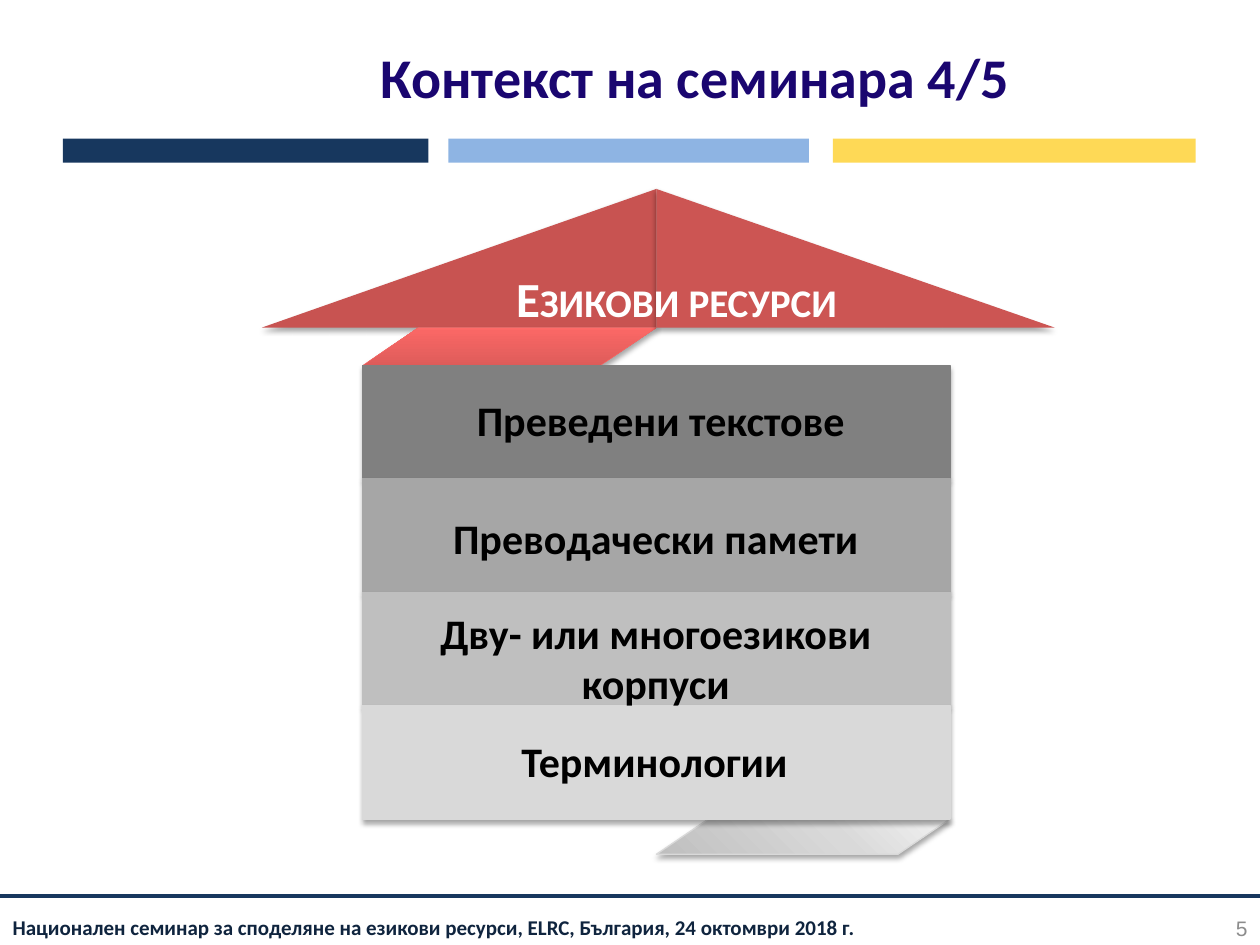
from lxml.etree import SubElement
from pptx import Presentation
from pptx.dml.color import RGBColor
from pptx.enum.shapes import MSO_CONNECTOR as Connector, MSO_SHAPE as Shape
from pptx.enum.text import MSO_ANCHOR as Anchor, PP_ALIGN as Align
from pptx.oxml.ns import qn
from pptx.util import Inches, Pt

WIDTH, HEIGHT = 10, 7.5
TITLE = "Контекст на семинара 4/5"
FOOTER = "Национален семинар за споделяне на езикови ресурси, ELRC, България, 24 октомври 2018 г."
PAGE_NUMBER = "5"
ROOF_LABEL = "Езикови ресурси"
BARS = [(0.5, 2.9, "17375E"), (3.56, 2.86, "8EB4E3"), (6.61, 2.88, "FED956")]
FLOORS = [
    ("Преведени текстове", "808080", 3.33, 3.08, 0.5),
    ("Преводачески памети", "A6A6A6", 3.29, 4.02, 0.5),
    ("Дву- или многоезикови корпуси", "BFBFBF", 3.29, 4.77, 0.91),
    ("Терминологии", "D9D9D9", 3.28, 5.79, 0.5),
]
RED_FOLD = [(1, "DE5C5A"), (91, "F96765"), (100, "FF6A68")]
GREY_FOLD = [(0, "BFBFBF"), (61, "D9D9D9"), (100, "F2F2F2")]

WALL_LEFT, WALL_TOP, WALL_WIDTH, FLOOR_HEIGHT = 2.88, 2.9, 4.66, 0.9
MIDDLE = WALL_LEFT + WALL_WIDTH / 2
ROOF_TOP, ROOF_HEIGHT = 1.5, 1.1
ROOF_BOTTOM = ROOF_TOP + ROOF_HEIGHT
WALL_BOTTOM = WALL_TOP + len(FLOORS) * FLOOR_HEIGHT

presentation = Presentation()
presentation.slide_width, presentation.slide_height = Inches(WIDTH), Inches(HEIGHT)
slide = presentation.slides.add_slide(presentation.slide_layouts[6])


def color(value):
    return RGBColor.from_string(value)


def add_shadow(shape):
    effects = shape._element.spPr.find(qn("a:effectLst"))
    shadow = SubElement(effects, qn("a:outerShdw"), blurRad=str(Pt(3.1)),
                        dist=str(Pt(1.8)), dir="5400000", rotWithShape="0")
    tint = SubElement(shadow, qn("a:srgbClr"), val="000000")
    SubElement(tint, qn("a:alpha"), val="35000")


def add_shape(kind, box, fill=None, line=None, line_width=0.75, shadow=True):
    shape = slide.shapes.add_shape(kind, *map(Inches, box))
    shape.shadow.inherit = False
    if fill:
        shape.fill.solid()
        shape.fill.fore_color.rgb = color(fill)
    if line:
        shape.line.color.rgb = color(line)
        shape.line.width = Pt(line_width)
    else:
        shape.line.fill.background()
    if shadow:
        add_shadow(shape)
    return shape


def add_fold(box, stops, angle, line, line_width):
    shape = add_shape(Shape.PARALLELOGRAM, box, None, line, line_width)
    shape.adjustments[0] = 1.476
    shape.fill.gradient()
    shape.fill.gradient_angle = angle
    stop_list = shape._element.spPr.find(qn("a:gradFill")).find(qn("a:gsLst"))
    for stop in list(stop_list):
        stop_list.remove(stop)
    for position, value in stops:
        stop = SubElement(stop_list, qn("a:gs"), pos=str(position * 1000))
        SubElement(stop, qn("a:srgbClr"), val=value)


def add_text(box, text, size, value, align=Align.CENTER, bold=True,
             font="Calibri", anchor=Anchor.TOP, insets=(0.1, 0.05)):
    shape = slide.shapes.add_textbox(*map(Inches, box))
    frame = shape.text_frame
    frame.word_wrap = True
    frame.vertical_anchor = anchor
    frame.margin_left = frame.margin_right = Inches(insets[0])
    frame.margin_top = frame.margin_bottom = Inches(insets[1])
    frame.text = text
    paragraph = frame.paragraphs[0]
    paragraph.alignment = align
    run = paragraph.runs[0]
    run.font.name, run.font.size, run.font.bold = font, Pt(size), bold
    run.font.color.rgb = color(value)
    return shape


for left, width, fill in BARS:
    add_shape(Shape.RECTANGLE, (left, 1.1, width, 0.19), fill, shadow=False)

rule = slide.shapes.add_connector(Connector.STRAIGHT, Inches(WIDTH), Inches(7.11), 0, Inches(7.11))
rule.line.color.rgb = color("17375E")
rule.line.width = Pt(2.25)
SubElement(rule._element.spPr, qn("a:effectLst"))

footer = add_text((0.02, 7.24, 7.17, 0.26), FOOTER, 12, "0F243E", Align.LEFT, insets=(0.08, 0.04))
footer.text_frame.paragraphs[0].line_spacing = 0.9
add_text((2.36, 0.14, 6.31, 0.92), TITLE, 32, "1A0670", anchor=Anchor.MIDDLE, insets=(0, 0))
add_text((7.67, 7.17, 2.33, 0.4), PAGE_NUMBER, 12, "8C8C8C", Align.RIGHT, False, "Arial", Anchor.MIDDLE)

left_roof = add_shape(Shape.RIGHT_TRIANGLE, (2.08, ROOF_TOP, MIDDLE - 2.08, ROOF_HEIGHT), "C85351")
left_roof._element.spPr.find(qn("a:xfrm")).set("flipH", "1")
add_fold((MIDDLE, WALL_BOTTOM, WALL_WIDTH / 2, 0.28), GREY_FOLD, 45, "D9D9D9", 0.75)
add_fold((WALL_LEFT, ROOF_BOTTOM, WALL_WIDTH / 2, WALL_TOP - ROOF_BOTTOM), RED_FOLD, 90, "F96765", 0.25)

for row, (label, fill, *label_box) in enumerate(FLOORS):
    top = WALL_TOP + row * FLOOR_HEIGHT
    add_shape(Shape.RECTANGLE, (WALL_LEFT, top, WALL_WIDTH, FLOOR_HEIGHT), fill, fill)
add_shape(Shape.RIGHT_TRIANGLE, (MIDDLE, ROOF_TOP, 3.16, ROOF_HEIGHT), "CC5553")

roof_text = add_text((3.58, 2.08, 3.58, 0.57), ROOF_LABEL, 28, "FFFFFF")
roof_text.text_frame.paragraphs[0].runs[0].font._element.set("cap", "small")
for row, (label, fill, left, top, height) in enumerate(FLOORS):
    label_box = add_text((left, top, 3.83, height), label, 24, "000000")
    if row == 0:
        label_box.fill.solid()
        label_box.fill.fore_color.rgb = color(fill)

presentation.save("out.pptx")
